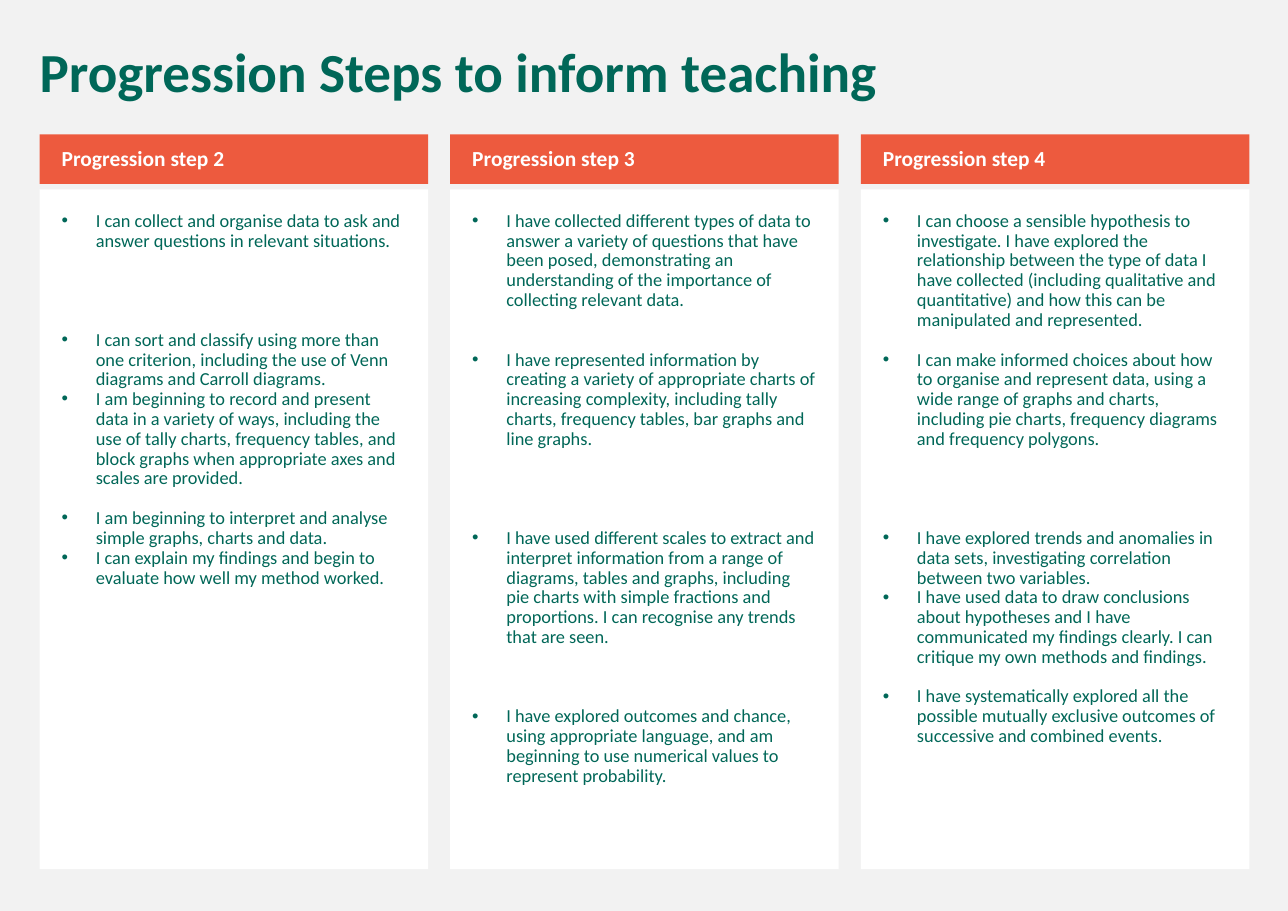
from dataclasses import dataclass

from lxml.etree import SubElement
from pptx import Presentation
from pptx.dml.color import RGBColor
from pptx.enum.shapes import MSO_SHAPE as Shape
from pptx.enum.text import MSO_ANCHOR as Anchor, MSO_AUTO_SIZE as AutoSize, PP_ALIGN as Align
from pptx.oxml.ns import qn
from pptx.util import Inches, Pt

# Content: each statement is preceded by a number of lines of free space
TITLE = "Progression Steps to inform teaching"
STEPS = [
    ("Progression step 2", [
        (0, "I can collect and organise data to ask and answer questions in relevant situations."),
        (4, "I can sort and classify using more than one criterion, including the use of Venn "
            "diagrams and Carroll diagrams."),
        (0, "I am beginning to record and present data in a variety of ways, including the use of "
            "tally charts, frequency tables, and block graphs when appropriate axes and scales "
            "are provided."),
        (1, "I am beginning to interpret and analyse simple graphs, charts and data."),
        (0, "I can explain my findings and begin to evaluate how well my method worked."),
    ]),
    ("Progression step 3", [
        (0, "I have collected different types of data to answer a variety of questions that have "
            "been posed, demonstrating an understanding of the importance of collecting relevant "
            "data."),
        (2, "I have represented information by creating a variety of appropriate charts of "
            "increasing complexity, including tally charts, frequency tables, bar graphs and "
            "line graphs."),
        (4, "I have used different scales to extract and interpret information from a range of "
            "diagrams, tables and graphs, including pie charts with simple fractions and "
            "proportions. I can recognise any trends that are seen."),
        (3, "I have explored outcomes and chance, using appropriate language, and am beginning to "
            "use numerical values to represent probability."),
    ]),
    ("Progression step 4", [
        (0, "I can choose a sensible hypothesis to investigate. I have explored the relationship "
            "between the type of data I have collected (including qualitative and quantitative) "
            "and how this can be manipulated and represented."),
        (1, "I can make informed choices about how to organise and represent data, using a wide "
            "range of graphs and charts, including pie charts, frequency diagrams and frequency "
            "polygons."),
        (4, "I have explored trends and anomalies in data sets, investigating correlation between "
            "two variables."),
        (0, "I have used data to draw conclusions about hypotheses and I have communicated my "
            "findings clearly. I can critique my own methods and findings."),
        (1, "I have systematically explored all the possible mutually exclusive outcomes of "
            "successive and combined events."),
    ]),
]


@dataclass(frozen=True)
class Theme:
    background: RGBColor = RGBColor(0xF2, 0xF2, 0xF2)
    green: RGBColor = RGBColor(0x00, 0x67, 0x58)
    orange: RGBColor = RGBColor(0xED, 0x5A, 0x3E)
    white: RGBColor = RGBColor(0xFF, 0xFF, 0xFF)
    font: str = "Calibri"
    title_size: int = 36
    heading_size: int = 14
    body_size: int = 12
    line_spacing: float = 0.9
    line_pitch: float = 12.95


THEME = Theme()

# Grid, in inches
SLIDE_WIDTH, SLIDE_HEIGHT = 11.69, 8.27
LEFT, RIGHT, GAP = 0.36, 11.34, 0.2
COLUMN_WIDTH = (RIGHT - LEFT - GAP * (len(STEPS) - 1)) / len(STEPS)
HEADING_TOP, HEADING_HEIGHT = 1.22, 0.45
PANEL_TOP, PANEL_HEIGHT = 1.72, 6.17
PADDING, BULLET_INDENT = 0.2, 0.31


def set_frame(frame, anchor, left, top, right, bottom):
    frame.word_wrap = True
    frame.auto_size = AutoSize.NONE
    frame.vertical_anchor = anchor
    frame.margin_left, frame.margin_top = Inches(left), Inches(top)
    frame.margin_right, frame.margin_bottom = Inches(right), Inches(bottom)


def write(paragraph, text, size, color, bold=False):
    paragraph.alignment = Align.LEFT
    paragraph.line_spacing = THEME.line_spacing
    run = paragraph.add_run()
    run.text = text
    run.font.name, run.font.size, run.font.bold = THEME.font, Pt(size), bold
    run.font.color.rgb = color


def add_bullet(paragraph):
    properties = paragraph._p.get_or_add_pPr()
    properties.set("marL", str(Inches(BULLET_INDENT)))
    properties.set("indent", str(-Inches(BULLET_INDENT)))
    SubElement(properties, qn("a:buFont")).set("typeface", "Arial")
    SubElement(properties, qn("a:buChar")).set("char", "•")


def add_box(slide, left, top, height, color):
    shape = slide.shapes.add_shape(Shape.RECTANGLE, Inches(left), Inches(top),
                                   Inches(COLUMN_WIDTH), Inches(height))
    shape.shadow.inherit = False
    shape.fill.solid()
    shape.fill.fore_color.rgb = color
    shape.line.fill.background()
    return shape.text_frame


def add_step(slide, left, heading, statements):
    frame = add_box(slide, left, HEADING_TOP, HEADING_HEIGHT, THEME.orange)
    set_frame(frame, Anchor.MIDDLE, PADDING, 0.05, 0.1, 0.05)
    write(frame.paragraphs[0], heading, THEME.heading_size, THEME.white, bold=True)

    frame = add_box(slide, left, PANEL_TOP, PANEL_HEIGHT, THEME.white)
    set_frame(frame, Anchor.TOP, PADDING, PADDING, PADDING, PADDING)
    for index, (free_lines, statement) in enumerate(statements):
        paragraph = frame.add_paragraph() if index else frame.paragraphs[0]
        write(paragraph, statement, THEME.body_size, THEME.green)
        paragraph.space_before = Pt(free_lines * THEME.line_pitch)
        add_bullet(paragraph)


def main():
    presentation = Presentation()
    presentation.slide_width = Inches(SLIDE_WIDTH)
    presentation.slide_height = Inches(SLIDE_HEIGHT)
    slide = presentation.slides.add_slide(presentation.slide_layouts.get_by_name("Title Only"))
    slide.background.fill.solid()
    slide.background.fill.fore_color.rgb = THEME.background

    # Title
    title = slide.shapes.title
    title.left, title.top = Inches(LEFT - 0.1), Inches(0.36)
    title.width, title.height = Inches(RIGHT - LEFT + 0.1), Inches(0.65)
    set_frame(title.text_frame, Anchor.TOP, 0.1, 0.05, 0.1, 0.05)
    write(title.text_frame.paragraphs[0], TITLE, THEME.title_size, THEME.green, bold=True)

    # Step columns
    for column, (heading, statements) in enumerate(STEPS):
        add_step(slide, LEFT + column * (COLUMN_WIDTH + GAP), heading, statements)

    presentation.save("out.pptx")


if __name__ == "__main__":
    main()
